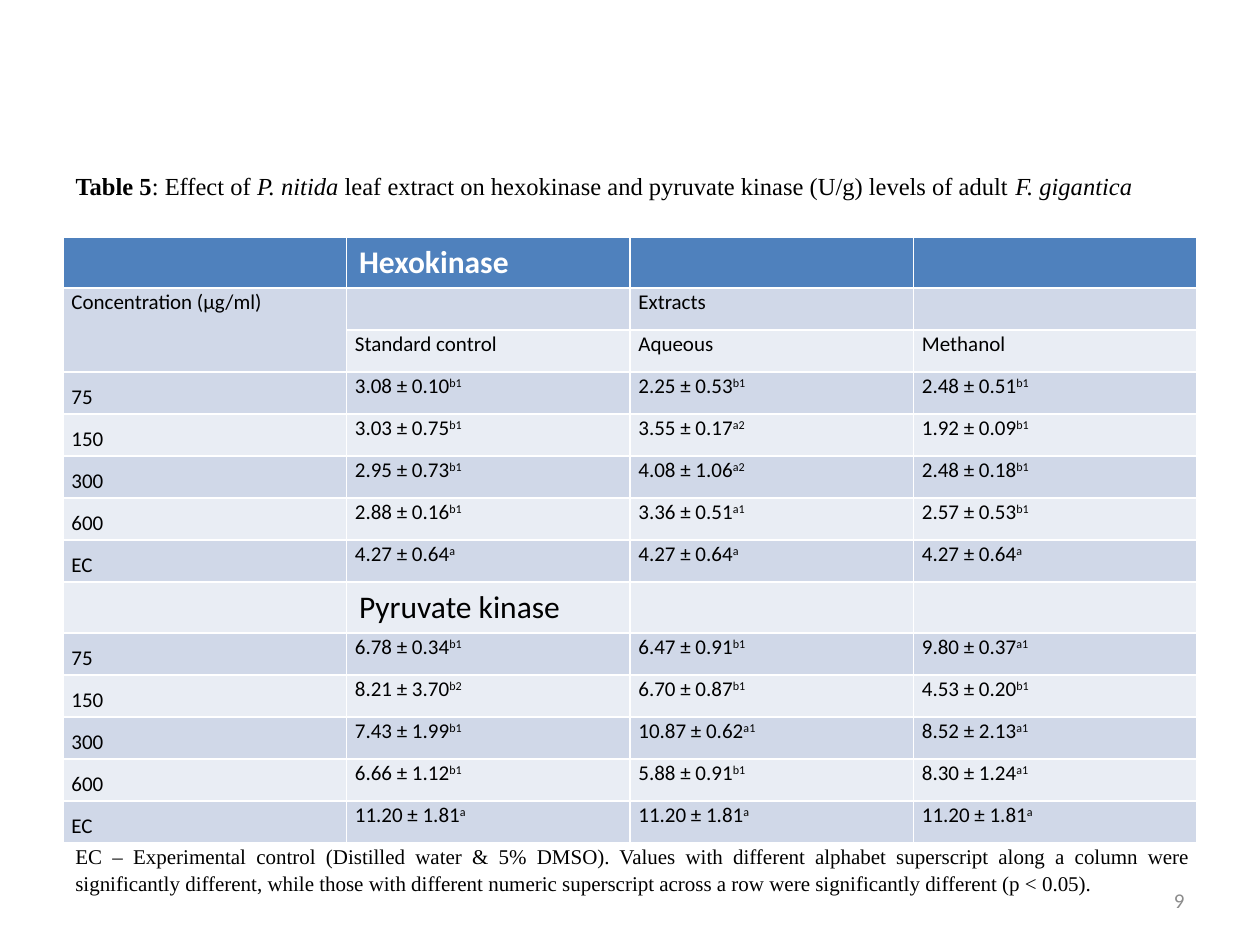
from lxml.etree import SubElement
from pptx import Presentation
from pptx.dml.color import RGBColor
from pptx.enum.text import MSO_ANCHOR, MSO_AUTO_SIZE, PP_ALIGN
from pptx.oxml.ns import qn
from pptx.util import Cm, Pt

# Runs of the caption: text, bold, italic
CAPTION = [
    ("Table 5", True, False),
    (": Effect of ", False, False),
    ("P. nitida", False, True),
    (" leaf extract on hexokinase and pyruvate kinase (U/g) levels of adult ", False, False),
    ("F. gigantica", False, True),
]
# A caret separates a value from its superscript
ROWS = [
    ("", "Hexokinase", "", ""),
    ("Concentration (µg/ml)", "", "Extracts", ""),
    ("", "Standard control", "Aqueous", "Methanol"),
    ("75", "3.08 ± 0.10^b1", "2.25 ± 0.53^b1", "2.48 ± 0.51^b1"),
    ("150", "3.03 ± 0.75^b1", "3.55 ± 0.17^a2", "1.92 ± 0.09^b1"),
    ("300", "2.95 ± 0.73^b1", "4.08 ± 1.06^a2", "2.48 ± 0.18^b1"),
    ("600", "2.88 ± 0.16^b1", "3.36 ± 0.51^a1", "2.57 ± 0.53^b1"),
    ("EC", "4.27 ± 0.64^a", "4.27 ± 0.64^a", "4.27 ± 0.64^a"),
    ("", "Pyruvate kinase", "", ""),
    ("75", "6.78 ± 0.34^b1", "6.47 ± 0.91^b1", "9.80 ± 0.37^a1"),
    ("150", "8.21 ± 3.70^b2", "6.70 ± 0.87^b1", "4.53 ± 0.20^b1"),
    ("300", "7.43 ± 1.99^b1", "10.87 ± 0.62^a1", "8.52 ± 2.13^a1"),
    ("600", "6.66 ± 1.12^b1", "5.88 ± 0.91^b1", "8.30 ± 1.24^a1"),
    ("EC", "11.20 ± 1.81^a", "11.20 ± 1.81^a", "11.20 ± 1.81^a"),
]
HEADING_ROWS = (0, 8)
FIRST_DATA_ROW = 3
NOTE = (
    "EC – Experimental control (Distilled water & 5% DMSO). Values with different "
    "alphabet superscript along a column were significantly different, while those with "
    "different numeric superscript across a row were significantly different (p < 0.05)."
)
PAGE = "9"

THEME = {
    "serif": "Times New Roman", "sans": "Calibri",
    "text": "000000", "header_text": "FFFFFF", "page": "8C8C8C",
    "header": "4F81BD", "odd": "D0D8E8", "even": "E9EDF4",
    "caption_size": 14, "heading_size": 18, "body_size": 12,
}
LEFT, WIDTH = Cm(1.27), Cm(22.86)
HEADING_HEIGHT = Cm(0.94)
BODY_HEIGHT = Cm(10.16) // (len(ROWS) - len(HEADING_ROWS))


def set_font(p, family, size, color="text", bold=None):
    p.font.name = THEME[family]
    p.font.size = Pt(THEME[size])
    p.font.color.rgb = RGBColor.from_string(THEME[color])
    p.font.bold = bold


def prepare_frame(shape, align, anchor=MSO_ANCHOR.TOP):
    tf = shape.text_frame
    tf.word_wrap = True
    tf.auto_size = MSO_AUTO_SIZE.NONE
    tf.vertical_anchor = anchor
    p = tf.paragraphs[0]
    p.alignment = align
    return p


def add_caption(s):
    title = s.shapes.title
    title.left, title.top, title.width, title.height = LEFT, Cm(3.28), WIDTH, Cm(0.86)
    p = prepare_frame(title, PP_ALIGN.JUSTIFY)
    p.line_spacing = 1.07
    p.space_after = Pt(8)
    set_font(p, "serif", "caption_size")
    for text, bold, italic in CAPTION:
        r = p.add_run()
        r.text = text
        r.font.bold, r.font.italic = bold, italic


def fill_cell(cell, text, row, col):
    heading = row in HEADING_ROWS
    fill = "header" if row == 0 else "odd" if row % 2 else "even"
    cell.fill.solid()
    cell.fill.fore_color.rgb = RGBColor.from_string(THEME[fill])
    p = cell.text_frame.paragraphs[0]
    if not heading:
        cell.margin_left = cell.margin_right = Cm(0.17)
        cell.margin_top = cell.margin_bottom = 0
        p.line_spacing = 1.5 if col == 0 and row >= FIRST_DATA_ROW else 1.07
    set_font(p, "sans", "heading_size" if heading else "body_size",
             "header_text" if row == 0 else "text", row == 0)
    value, _, mark = text.partition("^")
    if value:
        p.add_run().text = value
    if mark:
        r = p.add_run()
        r.text = mark
        r._r.get_or_add_rPr().set("baseline", "30000")


def add_results(s):
    height = HEADING_HEIGHT * len(HEADING_ROWS) + Cm(10.16)
    table = s.shapes.add_table(len(ROWS), len(ROWS[0]), LEFT, Cm(4.78), WIDTH, height).table
    for i, row in enumerate(ROWS):
        table.rows[i].height = HEADING_HEIGHT if i in HEADING_ROWS else BODY_HEIGHT
        for j, text in enumerate(row):
            fill_cell(table.cell(i, j), text, i, j)
    table.cell(1, 0).merge(table.cell(2, 0))


def add_note(s):
    box = s.shapes.add_textbox(LEFT, Cm(16.84), Cm(22.99), Cm(1.32))
    p = prepare_frame(box, PP_ALIGN.JUSTIFY)
    p.line_spacing = 1.07
    set_font(p, "serif", "body_size")
    p.add_run().text = NOTE


def add_page_number(s):
    box = s.shapes.add_textbox(Cm(18.2), Cm(17.65), Cm(5.93), Cm(1.01))
    p = prepare_frame(box, PP_ALIGN.RIGHT, MSO_ANCHOR.MIDDLE)
    set_font(p, "sans", "body_size", "page")
    field = SubElement(p._p, qn("a:fld"), type="slidenum",
                       id="{B6F15528-21DE-4FAA-801E-634DDDAF4B2B}")
    # The field shows the number that the presentation gives its first slide
    SubElement(field, qn("a:rPr"), lang="en-US")
    SubElement(field, qn("a:t")).text = PAGE


def main():
    prs = Presentation()
    prs.slide_width, prs.slide_height = Cm(25.4), Cm(19.05)
    prs.element.set("firstSlideNum", PAGE)
    s = prs.slides.add_slide(prs.slide_layouts[5])
    add_page_number(s)
    add_caption(s)
    add_results(s)
    add_note(s)
    prs.save("out.pptx")


if __name__ == "__main__":
    main()
